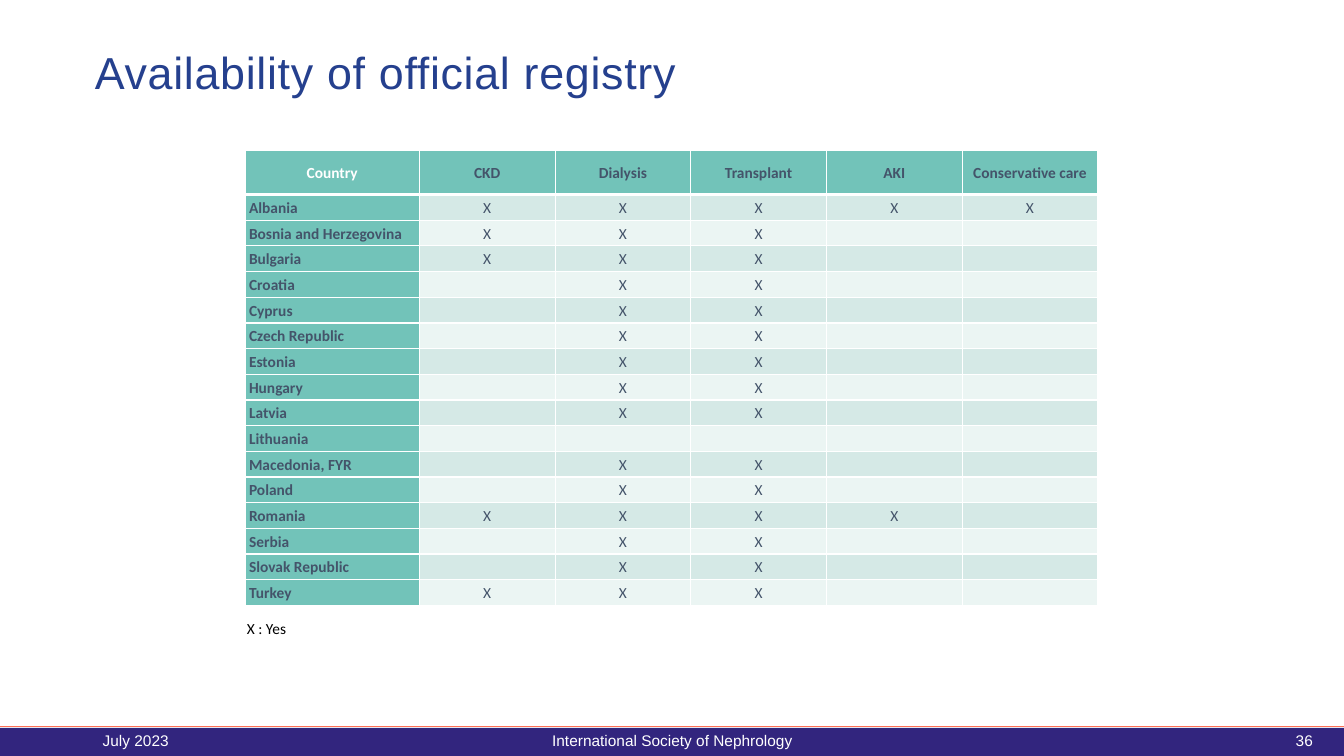
from lxml.etree import SubElement
from pptx import Presentation
from pptx.dml.color import RGBColor
from pptx.enum.shapes import MSO_CONNECTOR, MSO_SHAPE
from pptx.enum.text import MSO_ANCHOR, MSO_AUTO_SIZE, PP_ALIGN
from pptx.oxml.ns import qn
from pptx.util import Inches, Pt

COLORS = {
    "white": "FFFFFF", "black": "000000", "navy": "32257E", "coral": "FE7055",
    "title": "25408E", "teal": "72C3B9", "band": "D5E9E6", "pale": "EBF5F3",
    "slate": "44546A",
}


def style_text(paragraph, size, font_name, color, align=PP_ALIGN.LEFT, bold=False):
    paragraph.alignment = align
    for run in paragraph.runs:
        run.font.size = Pt(size)
        run.font.name = font_name
        run.font.bold = bold
        run.font.color.rgb = RGBColor.from_string(COLORS[color])


def add_border(cell, side, width):
    line = SubElement(cell._tc.get_or_add_tcPr(), qn(f"a:ln{side}"), w=str(Pt(width)))
    fill = SubElement(line, qn("a:solidFill"))
    SubElement(fill, qn("a:srgbClr"), val=COLORS["white"])


prs = Presentation()
prs.slide_width = Inches(13.33)
prs.slide_height = Inches(7.5)
slide = prs.slides.add_slide(prs.slide_layouts[5])

footer_band = slide.shapes.add_shape(
    MSO_SHAPE.RECTANGLE, Inches(0), Inches(7.22), Inches(13.33), Inches(0.28))
footer_band.shadow.inherit = False
footer_band.fill.solid()
footer_band.fill.fore_color.rgb = RGBColor.from_string(COLORS["navy"])
footer_band.line.fill.background()

footer_rule = slide.shapes.add_connector(
    MSO_CONNECTOR.STRAIGHT, Inches(0), Inches(7.21), Inches(13.33), Inches(7.21))
footer_rule.line.color.rgb = RGBColor.from_string(COLORS["coral"])
footer_rule.line.width = Pt(0.75)
SubElement(footer_rule._element.spPr, qn("a:effectLst"))

title = slide.shapes.title
title.left, title.top = Inches(0.84), Inches(0.39)
title.width, title.height = Inches(9.26), Inches(0.71)
title.text_frame.text = "Availability of official registry"
title.text_frame.vertical_anchor = MSO_ANCHOR.MIDDLE
heading = title.text_frame.paragraphs[0]
heading.line_spacing = 0.9
style_text(heading, 32, "Arial", "title")
heading.runs[0].font._element.set("spc", "50")

headers = ["Country", "CKD", "Dialysis", "Transplant", "AKI", "Conservative care"]
DIALYSIS_TRANSPLANT = ["", "X", "X", "", ""]
WITH_CKD = ["X", "X", "X", "", ""]
registries = [
    ("Albania", ["X"] * 5),
    ("Bosnia and Herzegovina", WITH_CKD),
    ("Bulgaria", WITH_CKD),
    ("Croatia", DIALYSIS_TRANSPLANT),
    ("Cyprus", DIALYSIS_TRANSPLANT),
    ("Czech Republic", DIALYSIS_TRANSPLANT),
    ("Estonia", DIALYSIS_TRANSPLANT),
    ("Hungary", DIALYSIS_TRANSPLANT),
    ("Latvia", DIALYSIS_TRANSPLANT),
    ("Lithuania", [""] * 5),
    ("Macedonia, FYR", DIALYSIS_TRANSPLANT),
    ("Poland", DIALYSIS_TRANSPLANT),
    ("Romania", ["X", "X", "X", "X", ""]),
    ("Serbia", DIALYSIS_TRANSPLANT),
    ("Slovak Republic", DIALYSIS_TRANSPLANT),
    ("Turkey", WITH_CKD),
]
rows = [headers] + [[country, *marks] for country, marks in registries]

registry_table = slide.shapes.add_table(
    len(rows), len(headers), Inches(2.43), Inches(1.49), Inches(8.46), Inches(4.52)).table
registry_table.horz_banding = False
registry_table.first_col = True
for index, column in enumerate(registry_table.columns):
    column.width = Inches(1.73) if index == 0 else Inches((8.46 - 1.73) / 5)
for index, row in enumerate(registry_table.rows):
    row.height = Inches(0.44) if index == 0 else Inches((4.52 - 0.44) / 16)

for r, values in enumerate(rows):
    for c, value in enumerate(values):
        cell = registry_table.cell(r, c)
        cell.margin_left = cell.margin_right = Inches(0.04)
        cell.margin_top = cell.margin_bottom = 0
        cell.vertical_anchor = MSO_ANCHOR.MIDDLE
        for side in "LRTB":
            under_header = (r, side) in [(0, "B"), (1, "T")]
            add_border(cell, side, 3 if under_header else 1)
        is_label = r == 0 or c == 0
        fill_name = "teal" if is_label else "band" if r % 2 else "pale"
        cell.fill.solid()
        cell.fill.fore_color.rgb = RGBColor.from_string(COLORS[fill_name])
        cell.text_frame.text = value
        entry = cell.text_frame.paragraphs[0]
        entry.line_spacing = 1.07
        style_text(entry, 11, "Calibri", "white" if r == c == 0 else "slate",
                   PP_ALIGN.LEFT if r and c == 0 else PP_ALIGN.CENTER, is_label)
        if not value:
            SubElement(entry._p, qn("a:endParaRPr"), sz="1100")

captions = [
    ("July 2023", 0.92, 7.15, 3, 0.4, PP_ALIGN.LEFT, "Arial", "white"),
    ("International Society of Nephrology", 4.42, 7.15, 4.5, 0.4,
     PP_ALIGN.CENTER, "Arial", "white"),
    ("36", 9.42, 7.15, 3.7, 0.4, PP_ALIGN.RIGHT, "Arial", "white"),
    ("X : Yes", 2.35, 6.09, 0.75, 0.29, PP_ALIGN.LEFT, "Calibri", "black"),
]
for text, left, top, width, height, align, font_name, color in captions:
    caption = slide.shapes.add_textbox(
        Inches(left), Inches(top), Inches(width), Inches(height)).text_frame
    caption.word_wrap = True
    caption.auto_size = MSO_AUTO_SIZE.NONE
    caption.vertical_anchor = MSO_ANCHOR.MIDDLE
    caption.text = text
    style_text(caption.paragraphs[0], 11, font_name, color, align)

prs.save("out.pptx")
